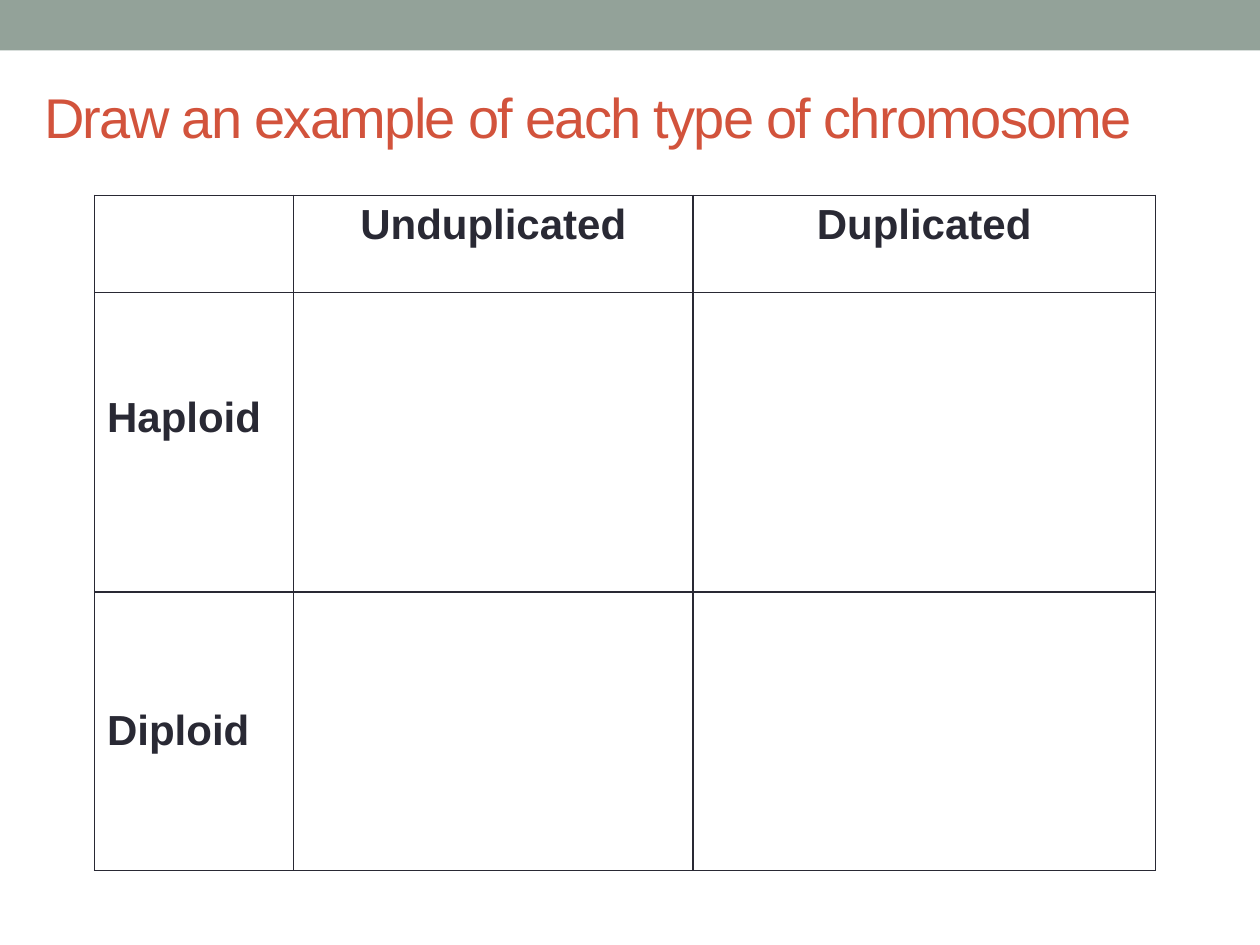
from dataclasses import dataclass

from lxml import etree
from pptx import Presentation
from pptx import util as u
from pptx.dml.color import RGBColor
from pptx.enum import shapes, text
from pptx.oxml.ns import qn


@dataclass(frozen=True)
class Theme:
    font: str = "Arial"
    bar: str = "93A299"
    title: str = "D2533C"
    ink: str = "292934"
    title_size: int = 32
    label_size: int = 24
    border: float = 1


@dataclass(frozen=True)
class Label:
    row: int
    col: int
    words: str
    align: text.PP_ALIGN
    anchor: text.MSO_ANCHOR
    bottom: float = 0.05


THEME = Theme()
WIDTH, HEIGHT = 10, 7.5
COLS = (1.58, 3.17, 3.67)
ROWS = (0.77, 2.38, 2.21)
CENTER, LEFT = text.PP_ALIGN.CENTER, text.PP_ALIGN.LEFT
TOP, MIDDLE = text.MSO_ANCHOR.TOP, text.MSO_ANCHOR.MIDDLE
LABELS = (
    Label(0, 1, "Unduplicated", CENTER, TOP),
    Label(0, 2, "Duplicated", CENTER, TOP),
    Label(1, 0, "Haploid", LEFT, MIDDLE, bottom=0.43),
    Label(2, 0, "Diploid", LEFT, MIDDLE),
)


def style_run(r, size: int, color: str, bold: bool = False) -> None:
    r.font.name = THEME.font
    r.font.size = u.Pt(size)
    r.font.bold = bold
    r.font.color.rgb = RGBColor.from_string(color)


def add_bar(s) -> None:
    sp = s.shapes.add_shape(shapes.MSO_SHAPE.RECTANGLE, 0, 0, u.Inches(WIDTH), u.Inches(0.4))
    sp.shadow.inherit = False
    sp.fill.solid()
    sp.fill.fore_color.rgb = RGBColor.from_string(THEME.bar)
    sp.line.fill.background()
    s.shapes.title._element.addprevious(sp._element)


def set_title(s, words: str) -> None:
    sp = s.shapes.title
    sp.left, sp.top, sp.width, sp.height = map(u.Inches, (0.25, 0.3, 9.58, 1.25))
    tf = sp.text_frame
    tf.text = words
    tf.word_wrap = True
    tf.auto_size = text.MSO_AUTO_SIZE.NONE
    tf.vertical_anchor = MIDDLE
    p = tf.paragraphs[0]
    p.alignment = LEFT
    r = p.runs[0]
    style_run(r, THEME.title_size, THEME.title)
    r.font._element.set("spc", "-100")


def format_cell(cell) -> None:
    props = cell._tc.get_or_add_tcPr()
    for side in ("lnL", "lnR", "lnT", "lnB"):
        ln = etree.SubElement(props, qn(f"a:{side}"), w=str(u.Pt(THEME.border)))
        fill = etree.SubElement(ln, qn("a:solidFill"))
        etree.SubElement(fill, qn("a:srgbClr"), val=THEME.ink)
    cell.fill.background()


def add_grid(s) -> None:
    frame = s.shapes.add_table(
        len(ROWS), len(COLS), u.Inches(0.75), u.Inches(1.55),
        u.Inches(sum(COLS)), u.Inches(sum(ROWS)),
    )
    table = frame.table
    table.first_row = table.horz_banding = False
    for column, width in zip(table.columns, COLS):
        column.width = u.Inches(width)
    for row, height in zip(table.rows, ROWS):
        row.height = u.Inches(height)
    for cell in table.iter_cells():
        format_cell(cell)
    for label in LABELS:
        cell = table.cell(label.row, label.col)
        cell.text_frame.text = label.words
        cell.vertical_anchor = label.anchor
        cell.margin_bottom = u.Inches(label.bottom)
        p = cell.text_frame.paragraphs[0]
        p.alignment = label.align
        style_run(p.runs[0], THEME.label_size, THEME.ink, bold=True)


def main() -> None:
    prs = Presentation()
    prs.slide_width, prs.slide_height = u.Inches(WIDTH), u.Inches(HEIGHT)
    s = prs.slides.add_slide(prs.slide_layouts.get_by_name("Title Only"))
    add_bar(s)
    set_title(s, "Draw an example of each type of chromosome")
    add_grid(s)
    prs.save("out.pptx")


if __name__ == "__main__":
    main()
